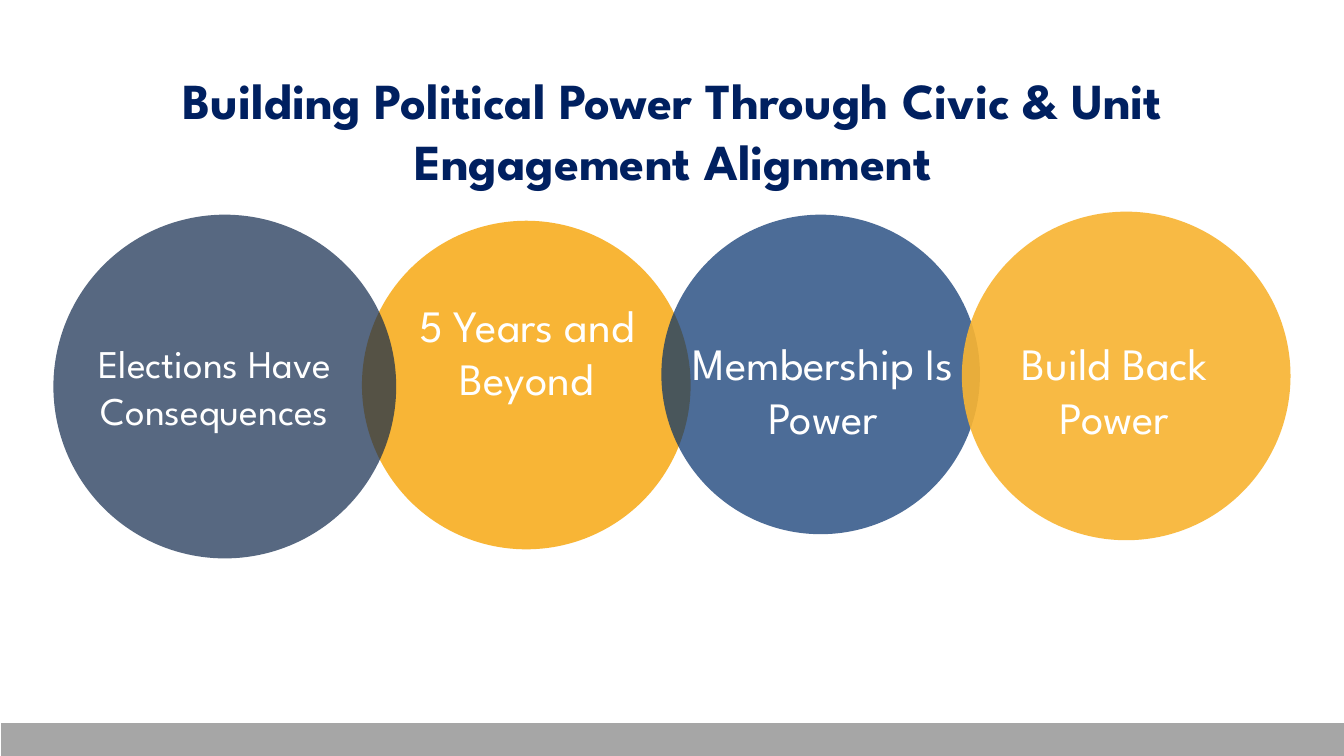
from typing import NamedTuple

from lxml.etree import SubElement
from pptx import Presentation
from pptx.dml.color import RGBColor
from pptx.enum.shapes import MSO_SHAPE as Preset
from pptx.enum.text import MSO_AUTO_SIZE as AutoSize, PP_ALIGN as Align
from pptx.oxml.ns import qn
from pptx.shapes.autoshape import Shape
from pptx.slide import Slide
from pptx.util import Emu, Pt

EMU_PER_PX = 9144
SLIDE_WIDTH, SLIDE_HEIGHT = 1333, 750
FOOTER_HEIGHT = 33
FONT = "League Spartan"

WHITE = RGBColor(0xFF, 0xFF, 0xFF)
TITLE_BLUE = RGBColor(0x00, 0x20, 0x60)
NAVY = RGBColor(0x10, 0x28, 0x4C)
BLUE = RGBColor(0x00, 0x2E, 0x6C)
GOLD = RGBColor(0xF8, 0xB4, 0x32)
GRAY = RGBColor(0xA6, 0xA6, 0xA6)


class Box(NamedTuple):
    left: int
    top: int
    width: int
    height: int

    def emu(self) -> list[Emu]:
        return [Emu(length * EMU_PER_PX) for length in self]


class Circle(NamedTuple):
    box: Box
    color: RGBColor
    opacity: int


class Label(NamedTuple):
    text: str
    box: Box
    size: int = 32


CIRCLES = [
    Circle(Box(359, 219, 326, 326), GOLD, 98),
    Circle(Box(53, 213, 340, 341), NAVY, 70),
    Circle(Box(656, 213, 316, 317), BLUE, 70),
    Circle(Box(954, 210, 326, 326), GOLD, 91),
]

LABELS = [
    Label("Elections Have Consequences", Box(56, 332, 314, 104), 28),
    Label("5 Years and Beyond", Box(385, 290, 275, 118)),
    Label("Membership Is Power", Box(669, 328, 295, 118)),
    Label("Build Back Power", Box(978, 328, 255, 118)),
]


def add_filled_shape(slide: Slide, preset: Preset, box: Box, color: RGBColor) -> Shape:
    shape = slide.shapes.add_shape(preset, *box.emu())
    shape.shadow.inherit = False
    shape.fill.solid()
    shape.fill.fore_color.rgb = color
    shape.line.fill.background()
    return shape


def add_circle(slide: Slide, circle: Circle) -> None:
    shape = add_filled_shape(slide, Preset.OVAL, circle.box, circle.color)
    color_element = shape.fill._xPr.find(qn("a:solidFill"))[0]
    SubElement(color_element, qn("a:alpha"), val=str(circle.opacity * 1000))


def add_text(slide: Slide, text: str, box: Box, *, size: int, color: RGBColor = WHITE,
             bold: bool = False, auto_size: AutoSize = AutoSize.NONE) -> None:
    frame = slide.shapes.add_textbox(*box.emu()).text_frame
    frame.word_wrap = True
    frame.auto_size = auto_size
    paragraph = frame.paragraphs[0]
    paragraph.alignment = Align.CENTER
    run = paragraph.add_run()
    run.text = text
    run.font.name = FONT
    run.font.size = Pt(size)
    run.font.bold = bold
    run.font.color.rgb = color


def add_footer(slide: Slide) -> None:
    box = Box(0, SLIDE_HEIGHT - FOOTER_HEIGHT, SLIDE_WIDTH, FOOTER_HEIGHT)
    footer = add_filled_shape(slide, Preset.RECTANGLE, box, GRAY)
    footer.line.color.rgb = WHITE
    footer.line.width = Pt(0.5)


def main() -> None:
    presentation = Presentation()
    presentation.slide_width = Emu(SLIDE_WIDTH * EMU_PER_PX)
    presentation.slide_height = Emu(SLIDE_HEIGHT * EMU_PER_PX)
    slide = presentation.slides.add_slide(presentation.slide_layouts[6])

    add_text(slide, "Building Political Power Through Civic & Unit Engagement Alignment",
             Box(85, 64, 1165, 111), size=36, color=TITLE_BLUE, bold=True)
    for circle in CIRCLES:
        add_circle(slide, circle)
    for label in LABELS:
        add_text(slide, label.text, label.box, size=label.size,
                 auto_size=AutoSize.SHAPE_TO_FIT_TEXT)
    add_footer(slide)

    presentation.save("out.pptx")


if __name__ == "__main__":
    main()
